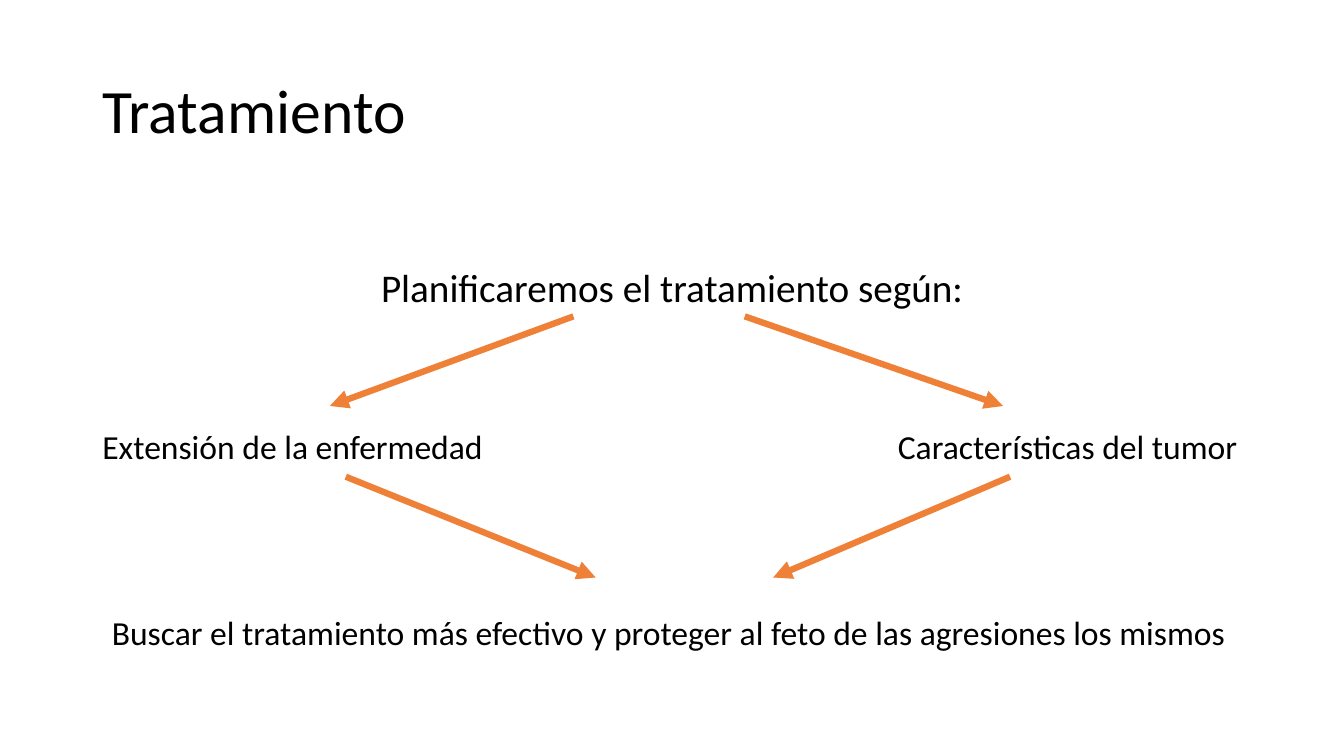
from lxml import etree
from pptx import Presentation
from pptx.dml.color import RGBColor
from pptx.enum.shapes import MSO_CONNECTOR
from pptx.enum.text import MSO_ANCHOR, MSO_AUTO_SIZE, PP_ALIGN
from pptx.oxml.ns import qn
from pptx.util import Pt

BLACK = RGBColor(0x00, 0x00, 0x00)
ORANGE = RGBColor(0xEE, 0x81, 0x37)
FONT = "Calibri"
STRAIGHT = MSO_CONNECTOR.STRAIGHT
LEFT, CENTER = PP_ALIGN.LEFT, PP_ALIGN.CENTER
MIDDLE, TOP = MSO_ANCHOR.MIDDLE, MSO_ANCHOR.TOP
NO_AUTOFIT = MSO_AUTO_SIZE.NONE


def write_text(box, text, size, align=LEFT, anchor=TOP):
    frame = box.text_frame
    frame.text = text
    frame.word_wrap = True
    frame.auto_size = NO_AUTOFIT
    frame.vertical_anchor = anchor
    para = frame.paragraphs[0]
    para.alignment = align
    font = para.runs[0].font
    font.name, font.size = FONT, Pt(size)
    font.color.rgb = BLACK
    return para


def place(box, left, top, width, height):
    box.left, box.top = Pt(left), Pt(top)
    box.width, box.height = Pt(width), Pt(height)


deck = Presentation()
deck.slide_width, deck.slide_height = Pt(960), Pt(540)
page = deck.slides.add_slide(deck.slide_layouts[1])

title = page.shapes.title
place(title, 66, 28.75, 828, 104.4)
para = write_text(title, "Tratamiento", 44, anchor=MIDDLE)
para.line_spacing = 0.9

body = page.placeholders[1]
place(body, 66, 143.75, 828, 342.6)
para = write_text(body, "Planificaremos el tratamiento según:", 28, CENTER)
para.line_spacing = 0.9
para.space_before = Pt(0)
body.text_frame.margin_top = Pt(48)
properties = para._p.get_or_add_pPr()
properties.set("marL", "0")
properties.set("indent", "0")
etree.SubElement(properties, qn("a:buNone"))

# Arrows: start x, start y, end x, end y
arrows = [
    (409.6, 226, 235.6, 290),
    (532, 226, 716.5, 290),
    (247, 340.5, 425.5, 412.5),
    (721.5, 340.5, 552.3, 412.5),
]
for ends in arrows:
    arrow = page.shapes.add_connector(STRAIGHT, *[Pt(value) for value in ends])
    arrow.line.color.rgb = ORANGE
    arrow.line.width = Pt(4.5)
    line = arrow.line._get_or_add_ln()
    etree.SubElement(line, qn("a:tailEnd"), type="triangle")
    etree.SubElement(arrow._element.spPr, qn("a:effectLst"))

# Labels: text, left, top, width
labels = [
    ("Extensión de la enfermedad", 66, 301, 289),
    ("Características del tumor", 634.2, 301, 259.5),
    ("Buscar el tratamiento más efectivo y proteger al feto "
     "de las agresiones los mismos", 72.8, 433.8, 824.4),
]
for text, left, top, width in labels:
    box = page.shapes.add_textbox(Pt(left), Pt(top), Pt(width), Pt(36.4))
    write_text(box, text, 24)

deck.save("out.pptx")
